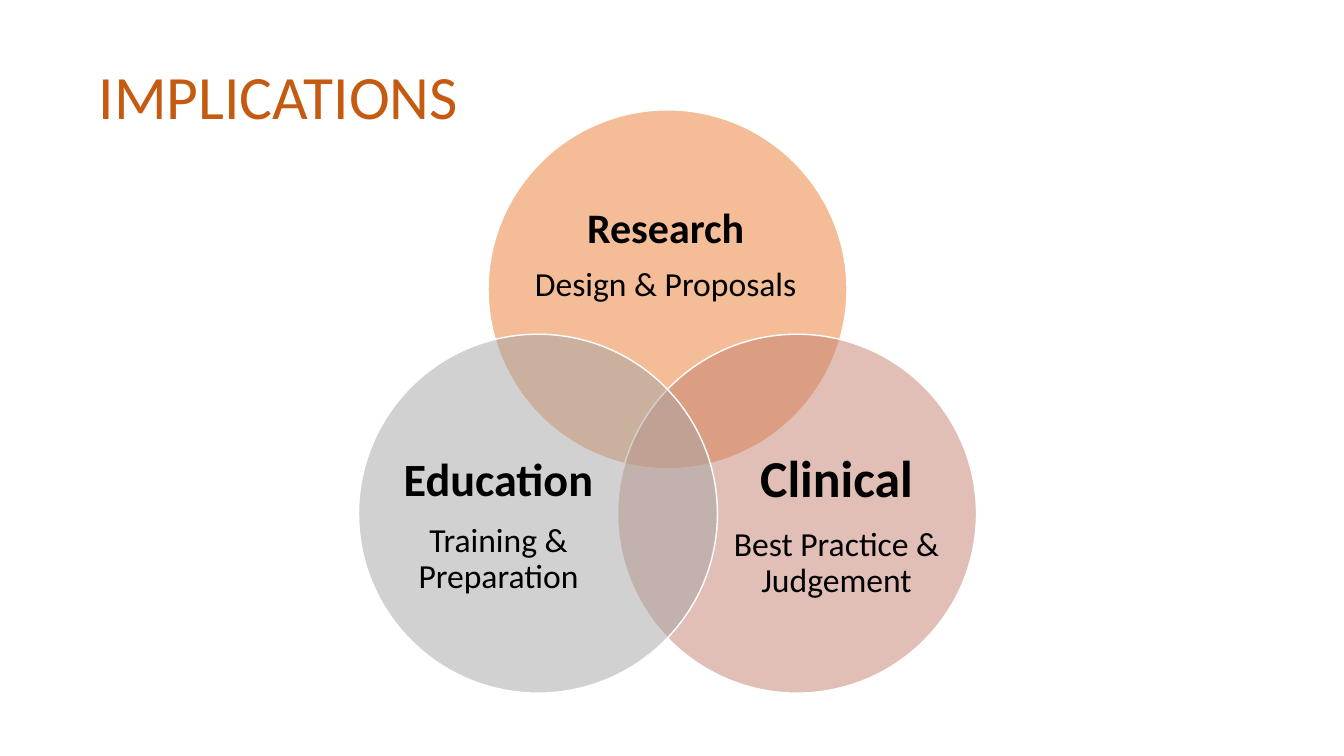
import math
from dataclasses import dataclass

from lxml import etree
from pptx import Presentation
from pptx.dml.color import RGBColor
from pptx.enum.shapes import MSO_SHAPE
from pptx.enum.text import MSO_ANCHOR, PP_ALIGN
from pptx.oxml.ns import qn
from pptx.util import Pt

ELLIPSE = MSO_SHAPE.OVAL
MIDDLE = MSO_ANCHOR.MIDDLE
LEFT, CENTER = PP_ALIGN.LEFT, PP_ALIGN.CENTER


@dataclass(frozen=True)
class Theme:
    """Colours and type sizes of the slide."""

    font: str = "Calibri"
    title_color: str = "C55A11"
    text_color: str = "000000"
    outline_color: str = "FFFFFF"
    research_color: str = "ED7D31"
    clinical_color: str = "C48170"
    education_color: str = "A5A5A5"
    title_size: float = 44
    research_size: float = 30
    clinical_size: float = 37
    education_size: float = 33
    detail_size: float = 24


THEME = Theme()
VENN_X, VENN_Y, DIAMETER = 476.8, 313.5, 256.4
ORBIT = DIAMETER * 5 / 12
TOP_LABEL = (0.13, 0.18, 0.73, 0.45)
RIGHT_LABEL = (0.31, 0.26, 0.6, 0.55)
LEFT_LABEL = (0.09, 0.26, 0.6, 0.55)


def add_text_box(slide, left, top, width, height, inset_x=0, inset_y=0):
    """Add a wrapping, vertically centred text box and return its frame."""
    box = slide.shapes.add_textbox(Pt(left), Pt(top), Pt(width), Pt(height))
    frame = box.text_frame
    frame.word_wrap = True
    frame.vertical_anchor = MIDDLE
    frame.margin_left = frame.margin_right = Pt(inset_x)
    frame.margin_top = frame.margin_bottom = Pt(inset_y)
    return frame


def write_text(paragraph, text, *, size, color=THEME.text_color, bold=False,
               align=CENTER, space_after=0):
    """Write formatted text into a paragraph."""
    paragraph.alignment = align
    paragraph.line_spacing = 0.9
    paragraph.space_after = Pt(space_after)
    run = paragraph.add_run()
    run.text = text
    run.font.name = THEME.font
    run.font.size = Pt(size)
    run.font.bold = bold
    run.font.color.rgb = RGBColor.from_string(color)


def add_circle(slide, left, top, color):
    """Add a half-transparent circle with a thin outline."""
    circle = slide.shapes.add_shape(
        ELLIPSE, Pt(left), Pt(top), Pt(DIAMETER), Pt(DIAMETER))
    circle.shadow.inherit = False
    circle.fill.solid()
    circle.fill.fore_color.rgb = RGBColor.from_string(color)
    fill_color = circle.fill._xPr.find(qn("a:solidFill")).find(qn("a:srgbClr"))
    etree.SubElement(fill_color, qn("a:alpha"), val="50000")
    circle.line.color.rgb = RGBColor.from_string(THEME.outline_color)
    circle.line.width = Pt(1)


def add_venn_area(slide, angle, color, label, heading, heading_size, detail):
    """Add one circle of the Venn diagram with its heading and detail."""
    radians = math.radians(angle)
    left = VENN_X + ORBIT * math.cos(radians) - DIAMETER / 2
    top = VENN_Y + ORBIT * math.sin(radians) - DIAMETER / 2
    add_circle(slide, left, top, color)
    x, y, width, height = (fraction * DIAMETER for fraction in label)
    frame = add_text_box(slide, left + x, top + y, width, height)
    write_text(frame.paragraphs[0], heading, size=heading_size, bold=True,
               space_after=0.35 * heading_size)
    write_text(frame.add_paragraph(), detail, size=THEME.detail_size,
               space_after=0.35 * THEME.detail_size)


def main():
    """Build and save the slide."""
    presentation = Presentation()
    presentation.slide_width, presentation.slide_height = Pt(960), Pt(540)
    slide = presentation.slides.add_slide(presentation.slide_layouts[6])
    title = add_text_box(slide, 63.4, 18.7, 828, 104.4, 7.2, 3.6)
    write_text(title.paragraphs[0], "IMPLICATIONS", size=THEME.title_size,
               color=THEME.title_color, align=LEFT)
    areas = [
        (THEME.research_color, TOP_LABEL, "Research",
         THEME.research_size, "Design & Proposals"),
        (THEME.clinical_color, RIGHT_LABEL, "Clinical",
         THEME.clinical_size, "Best Practice & Judgement"),
        (THEME.education_color, LEFT_LABEL, "Education",
         THEME.education_size, "Training & Preparation"),
    ]
    for index, area in enumerate(areas):
        add_venn_area(slide, -90 + 120 * index, *area)
    presentation.save("out.pptx")


if __name__ == "__main__":
    main()
